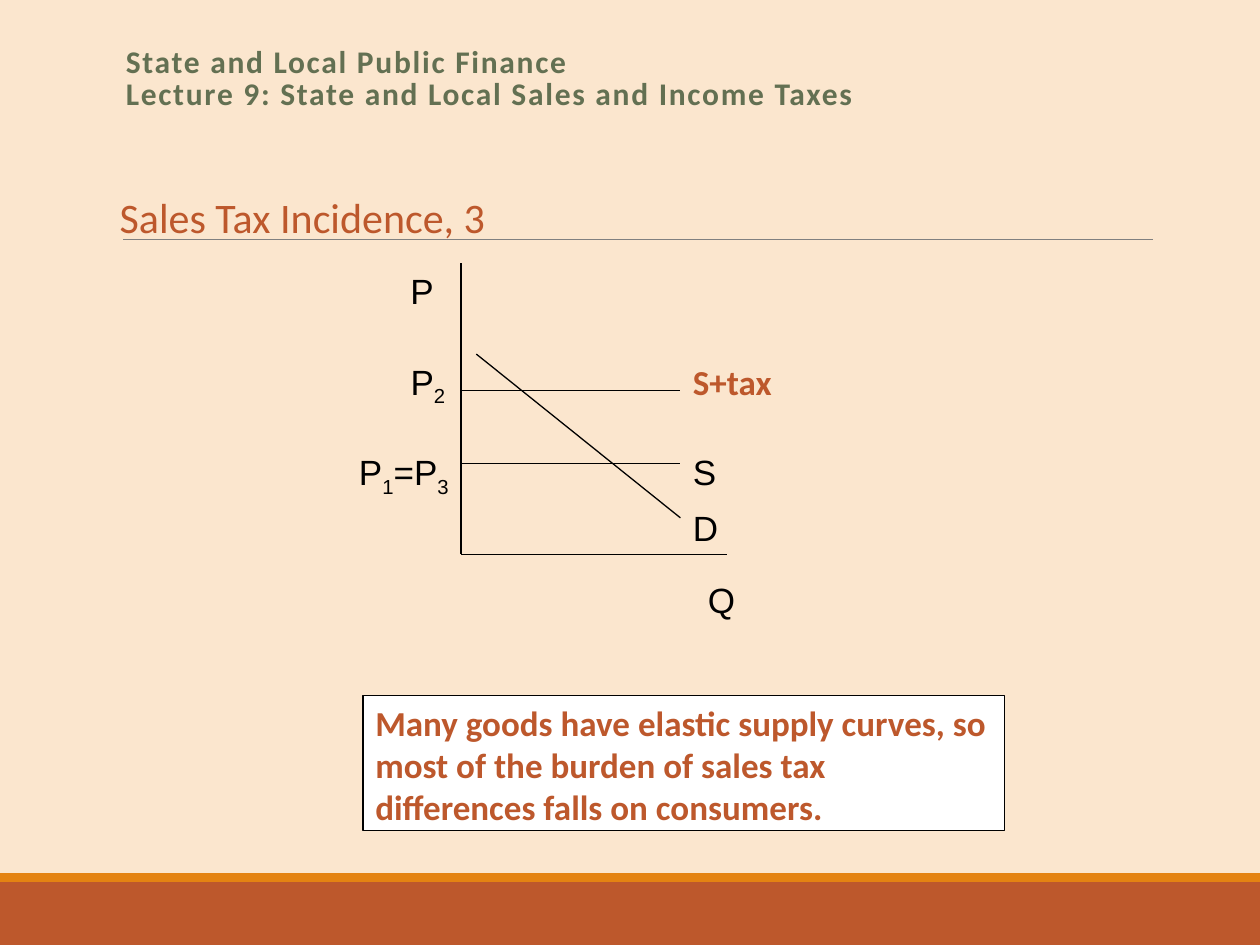
import pptx
import pptx.util
import pptx.dml.color
import pptx.enum.shapes
import pptx.oxml.ns
import lxml.etree

THEME = {
    "background": "FBE6CE", "rust": "BD582C", "orange": "E48312",
    "green": "637052", "rule": "808080", "ink": "000000", "paper": "FFFFFF",
    "heading_size": 24, "title_size": 18, "label_size": 20,
    "text_font": "Calibri", "label_font": "Arial",
}
COLORS = {name: pptx.dml.color.RGBColor.from_string(THEME[name])
          for name in ("background", "rust", "orange", "green", "rule", "ink", "paper")}

presentation = pptx.Presentation()
presentation.slide_width = pptx.util.Inches(10)
presentation.slide_height = pptx.util.Inches(7.5)
slide = presentation.slides.add_slide(presentation.slide_layouts[6])
slide.background.fill.solid()
slide.background.fill.fore_color.rgb = COLORS["background"]

# Grid of 100 columns by 75 rows
COLUMN = presentation.slide_width / 100
ROW = presentation.slide_height / 75


def add_line(start, end, color="ink", width=0.75):
    line = slide.shapes.add_connector(
        pptx.enum.shapes.MSO_CONNECTOR.STRAIGHT,
        int(start[0] * COLUMN), int(start[1] * ROW),
        int(end[0] * COLUMN), int(end[1] * ROW))
    line.line.color.rgb = COLORS[color]
    line.line.width = pptx.util.Pt(width)
    lxml.etree.SubElement(line._element.spPr, pptx.oxml.ns.qn("a:effectLst"))


def add_text(text, left, top, width, height, size, font="text_font", color="rust", bold=False):
    """Add a text box; each underscore lowers the character after it."""
    shape = slide.shapes.add_textbox(
        int(left * COLUMN), int(top * ROW), int(width * COLUMN), int(height * ROW))
    shape.text_frame.word_wrap = True
    paragraph = shape.text_frame.paragraphs[0]
    paragraph.font.name = THEME[font]
    paragraph.font.size = pptx.util.Pt(THEME[size])
    paragraph.font.color.rgb = COLORS[color]
    paragraph.font.bold = bold
    normal, *lowered = text.split("_")
    if not lowered:
        paragraph.text = text
        return shape
    paragraph.add_run().text = normal
    for part in lowered:
        subscript = paragraph.add_run()
        subscript.text = part[0]
        subscript._r.get_or_add_rPr().set("baseline", "-25000")
        if part[1:]:
            paragraph.add_run().text = part[1:]
    return shape


# Bands along the bottom edge
for top, height, color in ((70, 5, "rust"), (69.3, 0.7, "orange")):
    band = slide.shapes.add_shape(
        pptx.enum.shapes.MSO_SHAPE.RECTANGLE,
        0, int(top * ROW), presentation.slide_width, int(height * ROW))
    band.shadow.inherit = False
    band.fill.solid()
    band.fill.fore_color.rgb = COLORS[color]
    band.line.fill.background()

# Heading with its rule
add_line((9.8, 19), (91.5, 19), "rule", 0.5)
heading = add_text("Sales Tax Incidence, 3", 9.5, 15.2, 82.5, 4.3, "heading_size")
heading.text_frame.margin_left = heading.text_frame.margin_right = 0
heading.text_frame.paragraphs[0].line_spacing = 0.9

# Axes, the two supply curves and the demand curve
AXIS, BASE, CURVE_END = 36.6, 44, 54
add_line((AXIS, 20.9), (AXIS, BASE))
add_line((AXIS, BASE), (57.7, BASE))
for price in (36.8, 31):
    add_line((AXIS, price), (CURVE_END, price))
add_line((37.8, 28.1), (CURVE_END, 41.1))

# Axis, price and curve labels
for text, left, top, width in (
        ("P", 31.6, 20.9, 3.7), ("Q", 55.2, 45.4, 3.7),
        ("S", CURVE_END, 35.3, 6.2), ("D", CURVE_END, 39.7, 6.2),
        ("P_1=P_3", 27.5, 35.3, 9.9), ("P_2", 31.6, 28.1, 9.9)):
    add_text(text, left, top, width, 4.3, "label_size", "label_font", "ink")
add_text("S+tax", CURVE_END, 28.1, 11.9, 4.3, "label_size", bold=True)

# Conclusion box
conclusion = add_text(
    "Many goods have elastic supply curves, so most of the burden of sales tax "
    "differences falls on consumers.", 28.8, 55.2, 50.9, 10.7, "label_size", bold=True)
conclusion.fill.solid()
conclusion.fill.fore_color.rgb = COLORS["paper"]
conclusion.line.color.rgb = COLORS["ink"]
conclusion.line.width = pptx.util.Pt(0.75)

# Lecture title with letter spacing
title = add_text(
    "State and Local Public Finance\vLecture 9: State and Local Sales and Income Taxes",
    9, 3.3, 82.5, 6.5, "title_size", color="green", bold=True)
title_paragraph = title.text_frame.paragraphs[0]
title_paragraph.line_spacing = 0.85
for run in title_paragraph.runs:
    run._r.get_or_add_rPr().set("spc", "100")

presentation.save("out.pptx")
